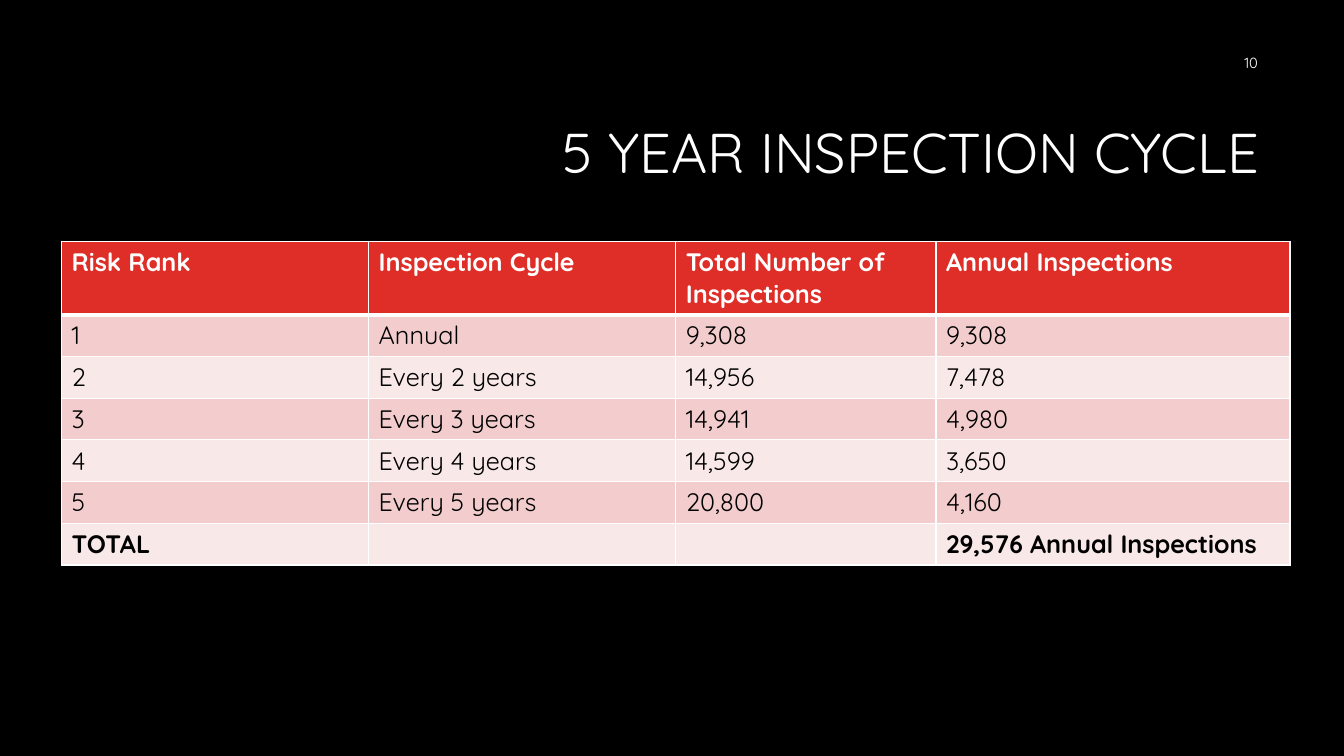
from lxml.etree import SubElement
from pptx import Presentation
from pptx.dml.color import RGBColor
from pptx.enum.text import MSO_ANCHOR as Anchor, MSO_AUTO_SIZE as AutoSize, PP_ALIGN as Align
from pptx.oxml.ns import qn
from pptx.util import Cm, Pt

FONT = "Quicksand"
WHITE, BLACK, RED = "FFFFFF", "000000", "DF2E28"
BANDS = ["F3CDCD", "F9E8E8"]
COLUMN_WIDTHS = [7.74, 7.74, 6.56, 8.92]
HEADER_HEIGHT, ROW_HEIGHT = 1.85, 1.05
ROWS = [
    ["Risk Rank", "Inspection Cycle", "Total Number of Inspections", "Annual Inspections"],
    ["1", "Annual", "9,308", "9,308"],
    ["2", "Every 2 years", "14,956", "7,478"],
    ["3", "Every 3 years", "14,941", "4,980"],
    ["4", "Every 4 years", "14,599", "3,650"],
    ["5", "Every 5 years", "20,800", "4,160"],
    ["TOTAL", "", "", "29,576 Annual Inspections"],
]


def rgb(value):
    return RGBColor.from_string(value)


def write(para, text, color, **formats):
    span = para.add_run()
    span.text = text
    span.font.color.rgb = rgb(color)
    for name, value in {"name": FONT, **formats}.items():
        setattr(span.font, name, value)


def write_right(box, text, size):
    """Fill a box with one right-aligned, vertically centred line."""
    frame = box.text_frame
    settings = {"word_wrap": True, "auto_size": AutoSize.NONE, "vertical_anchor": Anchor.MIDDLE}
    for name, value in settings.items():
        setattr(frame, name, value)
    para = frame.paragraphs[0]
    para.alignment = Align.RIGHT
    write(para, text, WHITE, size=Pt(size))
    return para


def add_title(page, text):
    title = page.shapes.title
    place = {"left": 8.05, "top": 2.13, "width": 23.93, "height": 3.58}
    for name, value in place.items():
        setattr(title, name, Cm(value))
    write_right(title, text, 40).line_spacing = 0.9


def add_page_number(page, text):
    box = page.shapes.add_textbox(Cm(24.33), Cm(1.07), Cm(7.62), Cm(1.02))
    write_right(box, text, 10.5)


def set_borders(cell, widths):
    properties = cell._tc.get_or_add_tcPr()
    for side, width in widths.items():
        line = SubElement(properties, qn(f"a:ln{side}"), w=str(Pt(width)))
        fill = SubElement(line, qn("a:solidFill"))
        SubElement(fill, qn("a:srgbClr"), val=WHITE)


def format_cell(cell, text, row):
    header, total = row == 0, row == len(ROWS) - 1
    # Thick rule between the header and the first data row
    set_borders(cell, {"L": 1, "R": 1, "T": 3 if row == 1 else 1, "B": 3 if header else 1})
    cell.fill.solid()
    cell.fill.fore_color.rgb = rgb(RED if header else BANDS[(row - 1) % 2])
    if text:
        write(cell.text_frame.paragraphs[0], text, WHITE if header else BLACK,
              size=Pt(18), bold=header or total)


def add_inspection_table(page):
    heights = [HEADER_HEIGHT] + [ROW_HEIGHT] * (len(ROWS) - 1)
    table = page.shapes.add_table(len(ROWS), len(COLUMN_WIDTHS), Cm(1.55), Cm(6.08),
                                  Cm(sum(COLUMN_WIDTHS)), Cm(sum(heights))).table
    for column, width in zip(table.columns, COLUMN_WIDTHS):
        column.width = Cm(width)
    for row, (height, texts) in enumerate(zip(heights, ROWS)):
        table.rows[row].height = Cm(height)
        for column, text in enumerate(texts):
            format_cell(table.cell(row, column), text, row)


def main():
    deck = Presentation()
    deck.slide_width, deck.slide_height = Cm(33.87), Cm(19.05)
    page = deck.slides.add_slide(deck.slide_layouts[5])

    # Black background
    page.background.fill.solid()
    page.background.fill.fore_color.rgb = rgb(BLACK)

    # Content
    add_title(page, "5 YEAR INSPECTION CYCLE")
    add_inspection_table(page)
    add_page_number(page, "10")
    deck.save("out.pptx")


if __name__ == "__main__":
    main()
